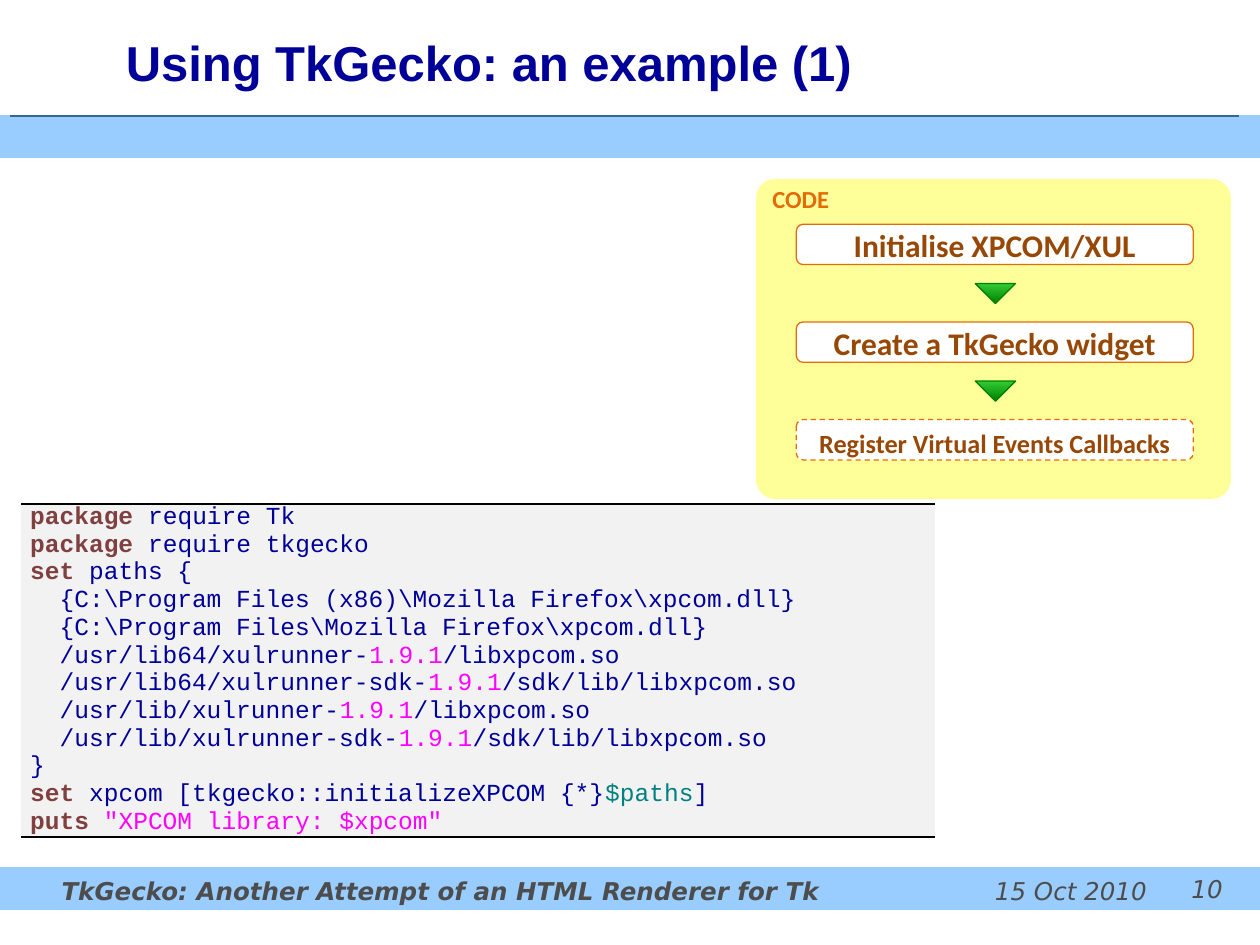
from typing import NamedTuple

from lxml import etree
from pptx import Presentation
from pptx.dml.color import RGBColor
from pptx.enum import dml, shapes, text
from pptx.oxml import ns
from pptx.util import Inches, Pt

NAVY = RGBColor(0x00, 0x00, 0x99)
SKY = RGBColor(0x99, 0xCC, 0xFF)
STEEL = RGBColor(0x33, 0x66, 0x99)
GREY = RGBColor(0x4D, 0x4D, 0x4D)
PALE_GREY = RGBColor(0xF2, 0xF2, 0xF2)
YELLOW = RGBColor(0xFF, 0xFF, 0x99)
WHITE = RGBColor(0xFF, 0xFF, 0xFF)
ORANGE = RGBColor(0xE3, 0x6C, 0x0A)
BROWN = RGBColor(0x98, 0x48, 0x06)
MAROON = RGBColor(0x80, 0x40, 0x40)
MAGENTA = RGBColor(0xFF, 0x00, 0xFF)
TEAL = RGBColor(0x00, 0x80, 0x80)
GREEN = RGBColor(0x00, 0x80, 0x00)
LIME = RGBColor(0x33, 0xCC, 0x33)

LEFT, CENTER, RIGHT = text.PP_ALIGN.LEFT, text.PP_ALIGN.CENTER, text.PP_ALIGN.RIGHT
TOP, MIDDLE = text.MSO_ANCHOR.TOP, text.MSO_ANCHOR.MIDDLE
RECTANGLE = shapes.MSO_SHAPE.RECTANGLE
ROUNDED = shapes.MSO_SHAPE.ROUNDED_RECTANGLE


class Area(NamedTuple):
    left: float
    top: float
    width: float
    height: float

    def lengths(self) -> list:
        return [Inches(value) for value in self]


class Style(NamedTuple):
    name: str
    size: float
    color: RGBColor
    bold: bool = False
    italic: bool = False
    align: text.PP_ALIGN = LEFT
    space_after: float = 0


class Span(NamedTuple):
    words: str
    color: RGBColor = NAVY
    bold: bool = False


class Label(NamedTuple):
    words: str
    area: Area
    style: Style
    anchor: text.MSO_ANCHOR = TOP
    insets: tuple = (0.1, 0.05)


class Step(NamedTuple):
    words: str
    size: float = 18
    inset: float = 0
    dashed: bool = False


def keyword(word: str, *rest: Span) -> list[Span]:
    return [Span(word + " ", MAROON, True), *rest]


def library(start: str, end: str) -> list[Span]:
    return [Span("  " + start), Span("1.9.1", MAGENTA), Span(end)]


FOOTER = Style("DejaVu Sans", 14, GREY, italic=True)
LABELS = [
    Label("Using TkGecko: an example (1)", Area(0.9, 0.08, 8.93, 0.83),
          Style("Arial", 28, NAVY, bold=True), MIDDLE),
    Label("15 Oct 2010", Area(7.75, 6.9, 1.45, 0.33), FOOTER._replace(align=RIGHT)),
    Label("TkGecko: Another Attempt of an HTML Renderer for Tk",
          Area(0.39, 6.9, 7.54, 0.33), FOOTER._replace(bold=True)),
    Label("10", Area(9.33, 6.89, 0.5, 0.33), FOOTER._replace(align=CENTER)),
]
CODE_LABEL = Label("CODE", Area(6.13, 1.45, 1, 0.25),
                   Style("Calibri", 14, ORANGE, bold=True, space_after=10), MIDDLE, (0, 0))
STEPS = [
    Step("Initialise XPCOM/XUL"),
    Step("Create a TkGecko widget"),
    Step("Register Virtual Events Callbacks", 15, 0.05, True),
]
STEP_TOP, STEP_PITCH, ARROW_OFFSET = 1.78, 0.775, 0.47
CODE = [
    keyword("package", Span("require Tk")),
    keyword("package", Span("require tkgecko")),
    keyword("set", Span("paths {")),
    [Span(r"  {C:\Program Files (x86)\Mozilla Firefox\xpcom.dll}")],
    [Span(r"  {C:\Program Files\Mozilla Firefox\xpcom.dll}")],
    library("/usr/lib64/xulrunner-", "/libxpcom.so"),
    library("/usr/lib64/xulrunner-sdk-", "/sdk/lib/libxpcom.so"),
    library("/usr/lib/xulrunner-", "/libxpcom.so"),
    library("/usr/lib/xulrunner-sdk-", "/sdk/lib/libxpcom.so"),
    [Span("}")],
    keyword("set", Span("xpcom [tkgecko::initializeXPCOM {*}"), Span("$paths", TEAL), Span("]")),
    keyword("puts", Span('"XPCOM library: $xpcom"', MAGENTA)),
]


def write(frame, words: str, style: Style, anchor, insets: tuple) -> None:
    frame.word_wrap = True
    frame.vertical_anchor = anchor
    frame.margin_left = frame.margin_right = Inches(insets[0])
    frame.margin_top = frame.margin_bottom = Inches(insets[1])
    para = frame.paragraphs[0]
    para.text = words
    para.alignment = style.align
    para.space_after = Pt(style.space_after)
    font = para.font
    font.name, font.size = style.name, Pt(style.size)
    font.bold, font.italic = style.bold, style.italic
    font.color.rgb = style.color


def add_label(page, label: Label) -> None:
    box = page.shapes.add_textbox(*label.area.lengths())
    write(box.text_frame, label.words, label.style, label.anchor, label.insets)


def add_box(page, kind, area: Area, fill: RGBColor, line: RGBColor | None = None):
    box = page.shapes.add_shape(kind, *area.lengths())
    box.shadow.inherit = False
    box.fill.solid()
    box.fill.fore_color.rgb = fill
    if line is None:
        box.line.fill.background()
    else:
        box.line.color.rgb = line
        box.line.width = Pt(0.75)
    return box


def add_step(page, step: Step, top: float) -> None:
    box = add_box(page, ROUNDED, Area(6.32, top, 3.15, 0.32), WHITE, ORANGE)
    if step.dashed:
        box.line.dash_style = dml.MSO_LINE.DASH
    style = Style("Calibri", step.size, BROWN, bold=True, align=CENTER, space_after=10)
    write(box.text_frame, step.words, style, TOP, (0.1, step.inset))


def add_arrow(page, top: float) -> None:
    arrow = add_box(page, shapes.MSO_SHAPE.ISOSCELES_TRIANGLE,
                    Area(7.74, top, 0.32, 0.16), GREEN, GREEN)
    arrow.fill.gradient()
    arrow.fill.gradient_angle = 270
    for stop, color in zip(arrow.fill.gradient_stops, (GREEN, LIME)):
        stop.color.rgb = color
    arrow.element.spPr.find(ns.qn("a:xfrm")).set("flipV", "1")


def add_rule(page) -> None:
    rule = page.shapes.add_connector(shapes.MSO_CONNECTOR.STRAIGHT,
                                     Inches(9.83), Inches(0.92), Inches(0.08), Inches(0.92))
    rule.line.color.rgb = STEEL
    rule.line.width = Pt(0.75)
    etree.SubElement(rule.element.spPr, ns.qn("a:effectLst"))


def set_borders(cell) -> None:
    properties = cell._tc.get_or_add_tcPr()
    for index, side in enumerate(("lnL", "lnR", "lnT", "lnB")):
        line = etree.Element(ns.qn("a:" + side), w=str(Pt(1)))
        if side in ("lnT", "lnB"):
            fill = etree.SubElement(line, ns.qn("a:solidFill"))
            etree.SubElement(fill, ns.qn("a:srgbClr"), val="000000")
        else:
            etree.SubElement(line, ns.qn("a:noFill"))
        properties.insert(index, line)


def add_code(page, lines: list[list[Span]], area: Area) -> None:
    table = page.shapes.add_table(1, 1, *area.lengths()).table
    table.first_row = table.horz_banding = False
    cell = table.cell(0, 0)
    cell.fill.solid()
    cell.fill.fore_color.rgb = PALE_GREY
    cell.margin_left = cell.margin_right = Inches(0.07)
    cell.margin_top = cell.margin_bottom = 0
    set_borders(cell)
    frame = cell.text_frame
    for index, spans in enumerate(lines):
        para = frame.add_paragraph() if index else frame.paragraphs[0]
        para.font.name, para.font.size = "Courier New", Pt(14)
        for span in spans:
            run = para.add_run()
            run.text = span.words
            run.font.bold = span.bold
            run.font.color.rgb = span.color


def main() -> None:
    deck = Presentation()
    deck.slide_width, deck.slide_height = Inches(10), Inches(7.5)
    page = deck.slides.add_slide(deck.slide_layouts[6])
    for top in (6.89, 0.92):
        add_box(page, RECTANGLE, Area(0, top, 10, 0.33), SKY, SKY)
    add_rule(page)
    add_code(page, CODE, Area(0.17, 4, 7.25, 2.64))
    for label in LABELS:
        add_label(page, label)
    panel = add_box(page, ROUNDED, Area(6, 1.42, 3.77, 2.54), YELLOW)
    panel.adjustments[0] = 0.06
    add_label(page, CODE_LABEL)
    for index, step in enumerate(STEPS):
        top = STEP_TOP + index * STEP_PITCH
        add_step(page, step, top)
        if index < len(STEPS) - 1:
            add_arrow(page, top + ARROW_OFFSET)
    deck.save("out.pptx")


if __name__ == "__main__":
    main()
